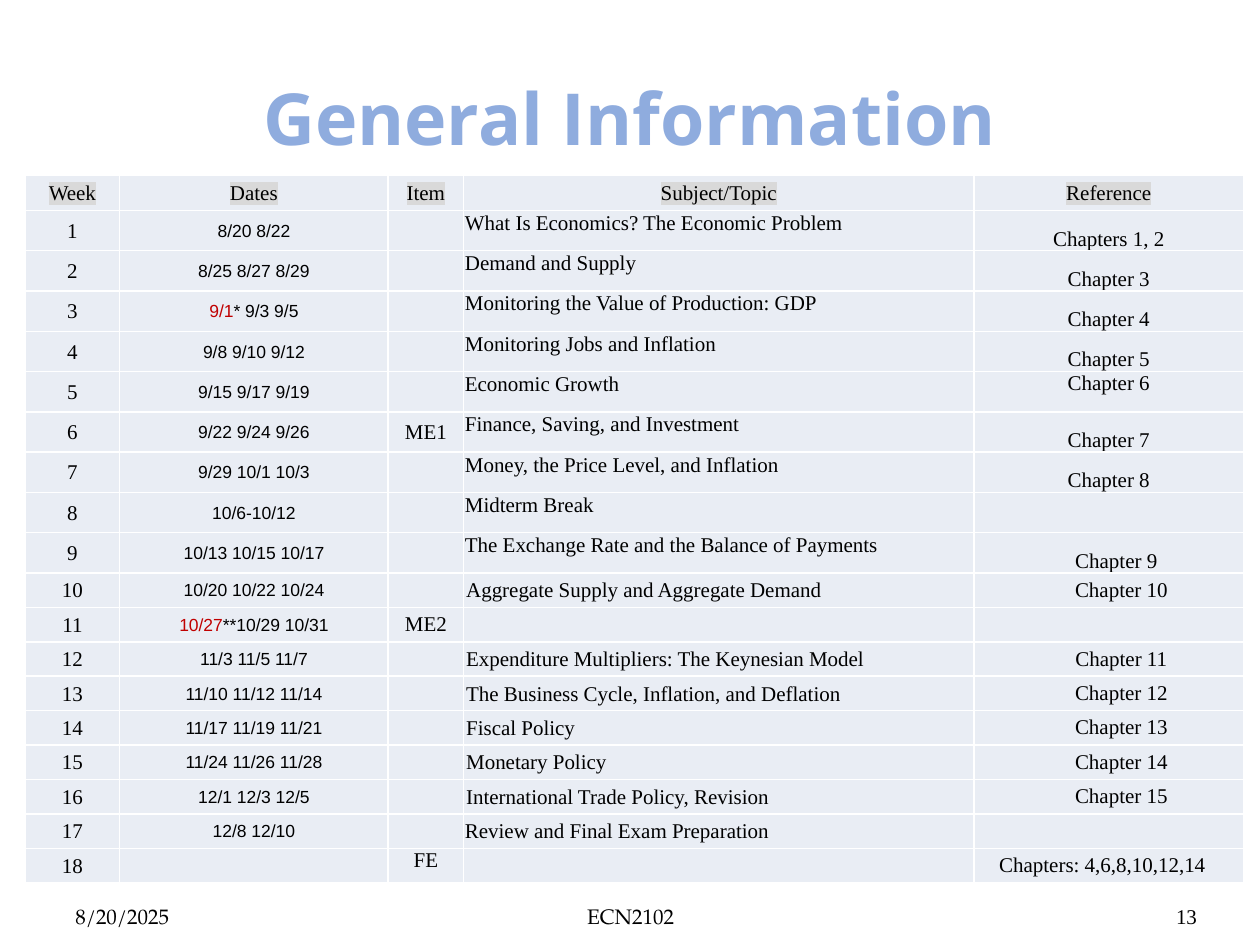
import pptx
import pptx.util
import pptx.dml.color
import pptx.enum.text
import lxml.etree

Inches = pptx.util.Inches
Pt = pptx.util.Pt
Align = pptx.enum.text.PP_ALIGN
Anchor = pptx.enum.text.MSO_ANCHOR
LEFT, MID, RIGHT = Align.LEFT, Align.CENTER, Align.RIGHT
TOP, CORE, BASE = Anchor.TOP, Anchor.MIDDLE, Anchor.BOTTOM
NS = "{http://schemas.openxmlformats.org/drawingml/2006/main}"
INK = {"title": "8FACDE", "text": "000000", "red": "C00000",
       "cell": "E9EDF4", "rule": "FFFFFF", "mark": "D9D9D9"}
SERIF, SANS = "Times New Roman", "Arial"

HEAD = ["Week", "Dates", "Item", "Subject/Topic", "Reference"]
WEEKS = [
    ("8/20 8/22", "", "What Is Economics? The Economic Problem", "Chapters 1, 2"),
    ("8/25 8/27 8/29", "", "Demand and Supply", "Chapter 3"),
    ("9/1|* 9/3 9/5", "", "Monitoring the Value of Production: GDP", "Chapter 4"),
    ("9/8 9/10 9/12", "", "Monitoring Jobs and Inflation", "Chapter 5"),
    ("9/15 9/17 9/19", "", "Economic Growth", "Chapter 6"),
    ("9/22 9/24 9/26", "ME1", "Finance, Saving, and Investment", "Chapter 7"),
    ("9/29 10/1 10/3", "", "Money, the Price Level, and Inflation", "Chapter 8"),
    ("10/6-10/12", "", "Midterm Break", ""),
    ("10/13 10/15 10/17", "", "The Exchange Rate and the Balance of Payments", "Chapter 9"),
    ("10/20 10/22 10/24", "", "Aggregate Supply and Aggregate Demand", "Chapter 10"),
    ("10/27|**10/29 10/31", "ME2", "", ""),
    ("11/3 11/5 11/7", "", "Expenditure Multipliers: The Keynesian Model", "Chapter 11"),
    ("11/10 11/12 11/14", "", "The Business Cycle, Inflation, and Deflation", "Chapter 12"),
    ("11/17 11/19 11/21", "", "Fiscal Policy", "Chapter 13"),
    ("11/24 11/26 11/28", "", "Monetary Policy", "Chapter 14"),
    ("12/1 12/3 12/5", "", "International Trade Policy, Revision", "Chapter 15"),
    ("12/8 12/10", "", "Review and Final Exam Preparation", ""),
    ("", "FE", "", "Chapters: 4,6,8,10,12,14"),
]
WIDTHS = [0.75, 2.13, 0.6, 4.05, 2.14]
TALL, FIRST, HIGH, FULL = 9, 0.28, 0.32, 5.62
LOW = (FULL - FIRST - TALL * HIGH) / (len(WEEKS) - TALL)


def apply(item, values):
    for name, value in values.items():
        setattr(item, name, value)


class Deck:
    def __init__(self, show):
        self.slide = show.slides.add_slide(show.slide_layouts[6])

    def color(self, name):
        return pptx.dml.color.RGBColor.from_string(INK[name])

    def run(self, para, text, font, size, ink="text", bold=False, mark=False):
        run = para.add_run()
        run.text = text
        apply(run.font, {"name": font, "size": Pt(size), "bold": bold})
        run.font.color.rgb = self.color(ink)
        if mark:
            light = lxml.etree.Element(NS + "highlight")
            lxml.etree.SubElement(light, NS + "srgbClr", val=INK["mark"])
            run.font._element.find(NS + "solidFill").addnext(light)

    def label(self, text, place, font, size, align=LEFT, anchor=BASE,
              side=0.1, **look):
        box = self.slide.shapes.add_textbox(*map(Inches, place))
        frame = box.text_frame
        apply(frame, {"word_wrap": True, "vertical_anchor": anchor,
                      "margin_left": Inches(side), "margin_right": Inches(side)})
        para = frame.paragraphs[0]
        para.alignment = align
        self.run(para, text, font, size, **look)

    def grid(self, place, widths, heights):
        shape = self.slide.shapes.add_table(len(heights), len(widths),
                                            *map(Inches, place))
        table = shape.table
        apply(table, {"first_row": False, "horz_banding": False})
        for col, width in zip(table.columns, widths):
            col.width = Inches(width)
        for row, height in zip(table.rows, heights):
            row.height = Inches(height)
        return table

    def cell(self, cell, text, font=SERIF, size=12, align=MID, anchor=CORE,
             pad=0.01, left=0, first=0, mark=False):
        apply(cell, {"vertical_anchor": anchor, "margin_left": Inches(pad),
                     "margin_right": Inches(pad), "margin_top": Inches(pad),
                     "margin_bottom": 0})
        cell.fill.solid()
        cell.fill.fore_color.rgb = self.color("cell")
        props = cell._tc.get_or_add_tcPr()
        for spot, side in enumerate(("lnL", "lnR", "lnT", "lnB")):
            line = lxml.etree.Element(NS + side, w=str(Pt(1)))
            fill = lxml.etree.SubElement(line, NS + "solidFill")
            lxml.etree.SubElement(fill, NS + "srgbClr", val=INK["rule"])
            props.insert(spot, line)
        para = cell.text_frame.paragraphs[0]
        para.alignment = align
        if left or first:
            apply_to = para._p.get_or_add_pPr()
            apply_to.set("marL", str(Inches(left)))
            apply_to.set("indent", str(Inches(first)))
        if not text:
            lxml.etree.SubElement(para._p, NS + "endParaRPr", sz=str(size * 100))
            return
        red, bar, rest = text.rpartition("|")
        if bar:
            self.run(para, red, font, size, ink="red")
        self.run(para, rest, font, size, mark=mark)


def looks(week):
    early, last = week <= TALL, week == len(WEEKS)
    topic = {"align": LEFT, "anchor": TOP if early else CORE,
             "first": 0.01 if TALL < week < 17 else 0}
    source = {"pad": 0, "anchor": BASE if early else CORE,
              "left": 0 if early else 0.2}
    if week == 5:
        source["anchor"] = TOP
    if week == TALL:
        source["left"] = 0.12
    if last:
        source["align"] = LEFT
    item = {"pad": 0, "anchor": TOP if last else CORE}
    return [{}, {"font": SANS, "size": 10}, item, topic, source]


def main():
    show = pptx.Presentation()
    apply(show, {"slide_width": Inches(10), "slide_height": Inches(7.5)})
    deck = Deck(show)
    deck.label("General Information", (0.5, 0.3, 9, 1.25), "Open Sans", 41,
               MID, CORE, ink="title", bold=True)
    deck.label("8/20/2025", (0.5, 7.02, 2.33, 0.4), "TeX Gyre Pagella", 12)
    deck.label("ECN2102", (3.42, 7.02, 3.17, 0.4), "TeX Gyre Pagella", 12, MID)
    deck.label("13", (8.67, 7.02, 0.83, 0.4), SERIF, 12, RIGHT, side=0)
    heights = [FIRST] + [HIGH] * TALL + [LOW] * (len(WEEKS) - TALL)
    table = deck.grid((0.2, 1.39, sum(WIDTHS), FULL), WIDTHS, heights)
    for col, text in enumerate(HEAD):
        deck.cell(table.cell(0, col), text, mark=True)
    for week, data in enumerate(WEEKS, 1):
        for col, (text, look) in enumerate(zip((str(week), *data), looks(week))):
            deck.cell(table.cell(week, col), text, **look)
    show.save("out.pptx")


if __name__ == "__main__":
    main()
